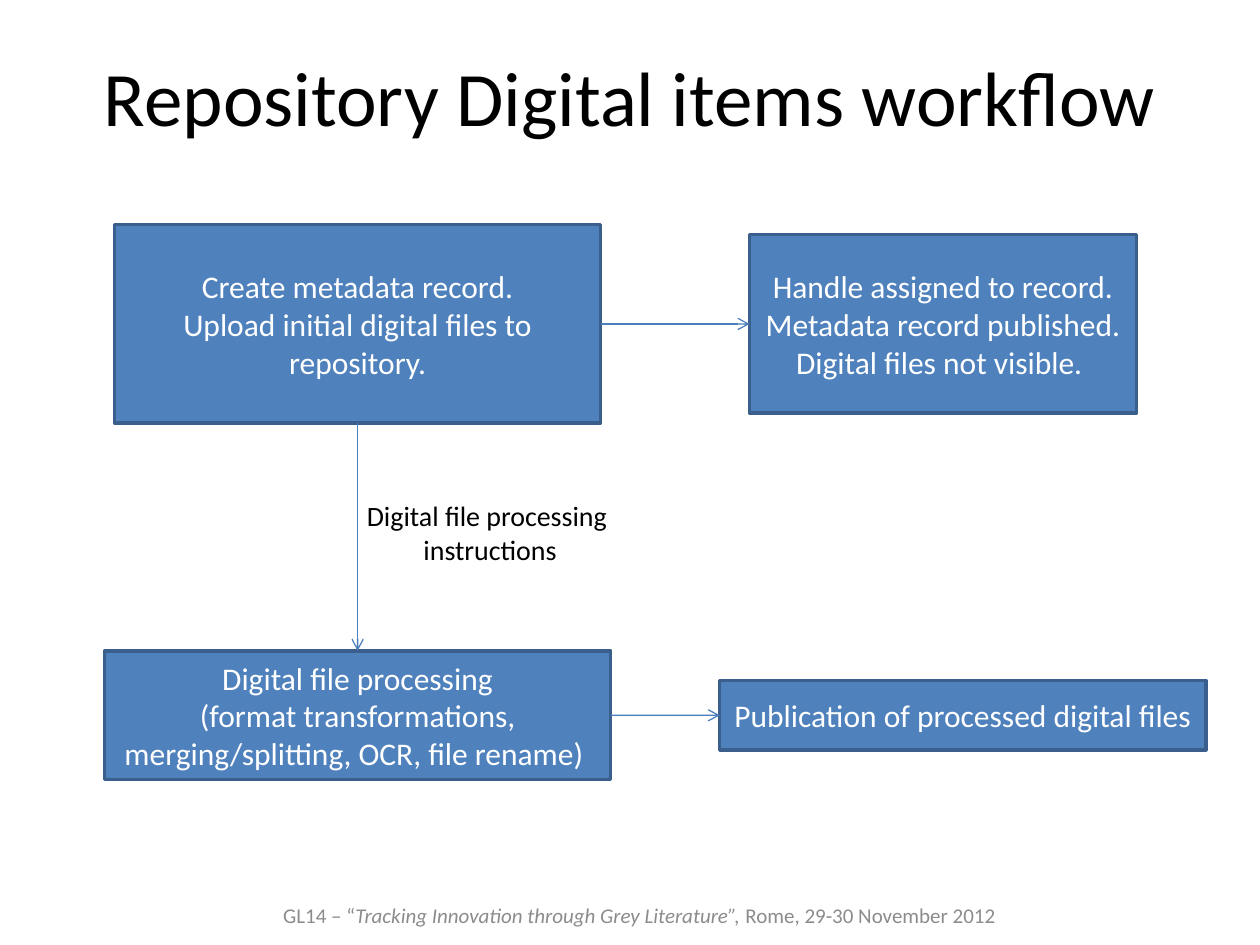
import pptx
import pptx.dml.color
import pptx.enum.shapes
import pptx.enum.text
import pptx.oxml
import pptx.oxml.ns
import pptx.util

Cm = pptx.util.Cm
Pt = pptx.util.Pt
RGB = pptx.dml.color.RGBColor
ALIGN = pptx.enum.text.PP_ALIGN
ANCHOR = pptx.enum.text.MSO_ANCHOR

WHITE = RGB(0xFF, 0xFF, 0xFF)
BLACK = RGB(0, 0, 0)
GREY = RGB(0x8C, 0x8C, 0x8C)
BLUE = RGB(0x4F, 0x81, 0xBD)
EDGE = RGB(0x3A, 0x5F, 0x8C)
ARROW = RGB(0x4B, 0x7E, 0xBC)

# Connection sites of a rectangle
TOP, LEFT, BOTTOM, RIGHT = range(4)


class Deck:
    font = "Calibri"
    looks = {
        "title": {"size": Pt(44), "color": BLACK},
        "box": {"size": Pt(18), "color": WHITE},
        "label": {"size": Pt(16), "color": BLACK},
        "footer": {"size": Pt(12), "color": GREY},
    }

    def __init__(self):
        self.prs = pptx.Presentation()
        self.prs.slide_width = Cm(25.4)
        self.prs.slide_height = Cm(19.05)
        self.slide = self.prs.slides.add_slide(self.prs.slide_layouts[5])

    def put(self, frame, look, paras, wrap=True, anchor=ANCHOR.MIDDLE):
        """Fill a frame; each paragraph is a list of (text, format) runs."""
        frame.word_wrap = wrap
        frame.vertical_anchor = anchor
        for i, runs in enumerate(paras):
            para = frame.paragraphs[0] if i == 0 else frame.add_paragraph()
            para.alignment = ALIGN.CENTER
            for text, extra in runs:
                run = para.add_run()
                run.text = text
                form = {"name": self.font, **self.looks[look], **extra}
                run.font.color.rgb = form.pop("color")
                for key, val in form.items():
                    setattr(run.font, key, val)

    def title(self, text):
        shape = self.slide.shapes.title
        area = {"left": Cm(1.27), "top": Cm(0.33),
                "width": Cm(22.86), "height": Cm(3.18)}
        for key, val in area.items():
            setattr(shape, key, val)
        self.put(shape.text_frame, "title", [[(text, {})]])

    def box(self, x, y, wide, high, *lines):
        """Draw a step centred on x, y."""
        shape = self.slide.shapes.add_shape(
            pptx.enum.shapes.MSO_SHAPE.RECTANGLE,
            Cm(x - wide / 2), Cm(y - high / 2), Cm(wide), Cm(high))
        shape.shadow.inherit = False
        shape.fill.solid()
        shape.fill.fore_color.rgb = BLUE
        shape.line.color.rgb = EDGE
        shape.line.width = Pt(2)
        self.put(shape.text_frame, "box", [[(s, {})] for s in lines])
        return shape

    def arrow(self, start, out, end, into):
        link = self.slide.shapes.add_connector(
            pptx.enum.shapes.MSO_CONNECTOR.STRAIGHT, 0, 0, 0, 0)
        link.begin_connect(start, out)
        link.end_connect(end, into)
        link.line.color.rgb = ARROW
        link.line.width = Pt(0.75)
        ns = pptx.oxml.ns.nsdecls("a")
        props = link.element.spPr
        props.find(pptx.oxml.ns.qn("a:ln")).append(
            pptx.oxml.parse_xml(f'<a:tailEnd {ns} type="arrow"/>'))
        props.append(pptx.oxml.parse_xml(f"<a:effectLst {ns}/>"))

    def text(self, x, y, wide, high, look, paras, **opts):
        shape = self.slide.shapes.add_textbox(Cm(x), Cm(y), Cm(wide), Cm(high))
        self.put(shape.text_frame, look, paras, **opts)


def main():
    deck = Deck()
    deck.title("Repository Digital items workflow")

    col, upper, lower = 7.21, 6.53, 14.42
    create = deck.box(col, upper, 9.8, 4, "Create metadata record.",
                      "Upload initial digital files to repository.")
    handle = deck.box(19.01, upper, 7.8, 3.6, "Handle assigned to record.",
                      "Metadata record published. Digital files not visible. ")
    work = deck.box(col, lower, 10.2, 2.6, "Digital file processing",
                    "(format transformations, merging/splitting, OCR, file rename) ")
    publish = deck.box(19.41, lower, 9.8, 1.4,
                       "Publication of processed digital files")

    deck.arrow(create, RIGHT, handle, LEFT)
    deck.arrow(work, RIGHT, publish, LEFT)
    deck.arrow(create, BOTTOM, work, TOP)

    deck.text(7.11, 9.93, 5.54, 1.63, "label",
              [[("Digital file processing ", {})], [("instructions", {})]],
              wrap=False, anchor=ANCHOR.TOP)
    deck.text(2.49, 17.93, 20.8, 1.02, "footer", [[
        ("GL14 – “", {}),
        ("Tracking Innovation through Grey Literature”, ", {"italic": True}),
        ("Rome, 29-30 November 2012", {}),
    ]])
    deck.prs.save("out.pptx")


if __name__ == "__main__":
    main()
